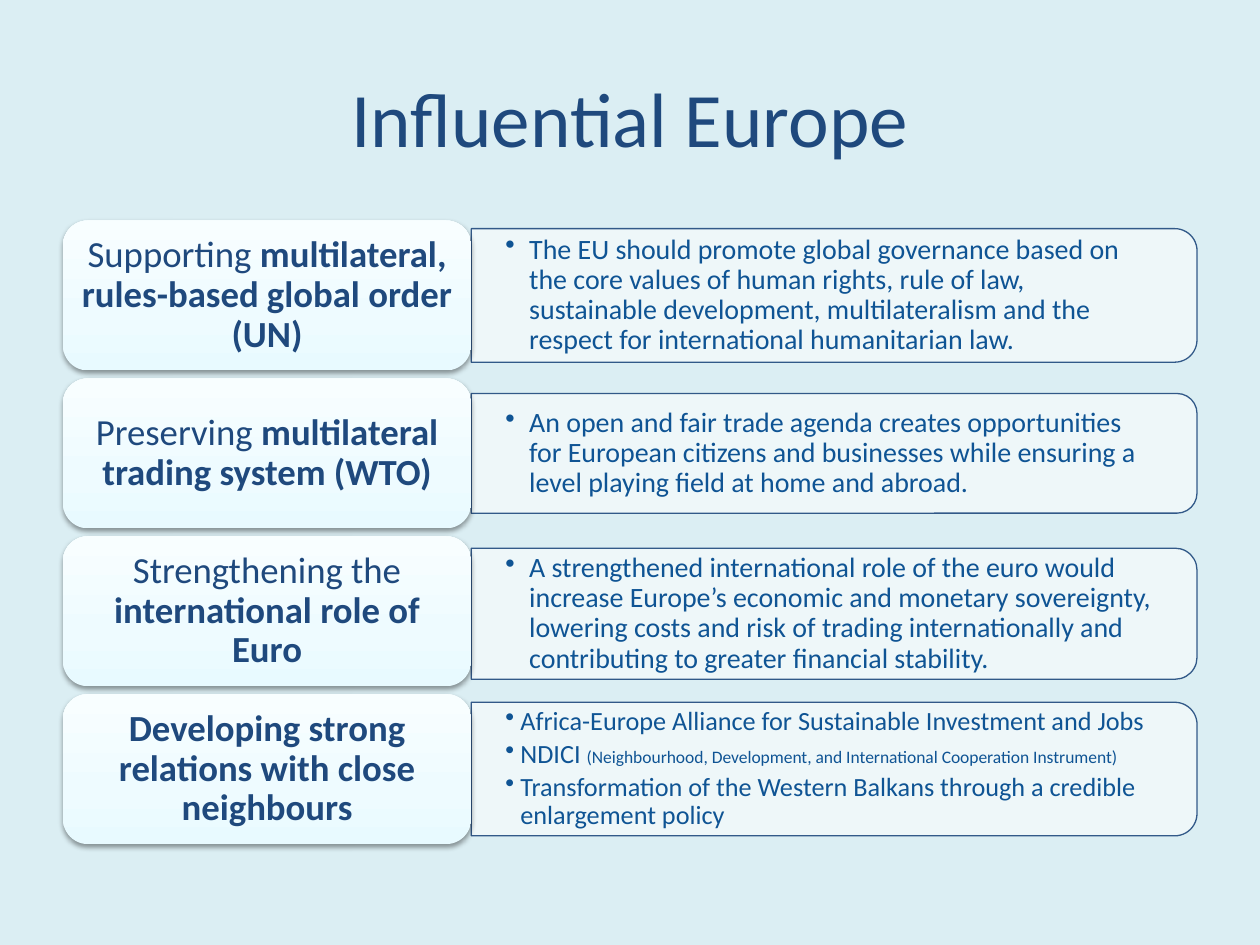
"""Build the Influential Europe slide: four themes, each with a detail panel."""
from lxml import etree
from pptx import Presentation
from pptx import util as u
from pptx.dml.color import RGBColor
from pptx.enum import shapes, text
from pptx.oxml import ns

COLORS = {"bg": "DBEEF3", "navy": "1F497D", "blue": "0F5494", "panel": "F1F8FA",
          "low": "E8FAFF", "mid": "EEFBFF", "high": "F8FEFF", "shadow": "000000"}
W, H = 10, 7.5
LEFT, SPLIT, RIGHT = 0.05 * W, 0.374 * W, 0.95 * W
TOP, PITCH, CARD_H = 1.75, 1.253, 1.19

# heading runs (text, bold), bullets of runs (text, size), indent, panel height, centre shift
ROWS = [
    ([("Supporting ", False), ("multilateral, rules-based global order (UN)", True)],
     [[("The EU should promote global governance based on the core values of human rights, "
        "rule of law, sustainable development, multilateralism and the respect for "
        "international humanitarian law.", 16)]], 0.19, 1.06, 0),
    ([("Preserving ", False), ("multilateral trading system (WTO)", True)],
     [[("An open and fair trade agenda creates opportunities for European citizens and "
        "businesses while ensuring a level playing field at home and abroad.", 16)]],
     0.19, 0.95, 0),
    ([("Strengthening the ", False), ("international role of Euro", True)],
     [[("A strengthened international role of the euro would increase Europe’s economic and "
        "monetary sovereignty, lowering costs and risk of trading internationally and "
        "contributing to greater financial stability.", 16)]], 0.19, 1.04, 0.02),
    ([("Developing strong relations with close neighbours", True)],
     [[("Africa-Europe Alliance for Sustainable Investment and Jobs", 15)],
      [("NDICI ", 15),
       ("(Neighbourhood, Development, and International Cooperation Instrument)", 10)],
      [("Transformation of the Western Balkans through a credible enlargement policy", 15)]],
     0.12, 1.06, 0),
]


def add_run(p, words, size, color, bold=False):
    r = p.add_run()
    r.text = words
    r.font.name, r.font.size, r.font.bold = "Calibri", u.Pt(size), bold
    r.font.color.rgb = RGBColor.from_string(COLORS[color])


def set_frame(tf, side, end):
    tf.word_wrap = True
    tf.auto_size = text.MSO_AUTO_SIZE.NONE
    tf.vertical_anchor = text.MSO_ANCHOR.MIDDLE
    tf.margin_left = tf.margin_right = u.Inches(side)
    tf.margin_top = tf.margin_bottom = u.Inches(end)


prs = Presentation()
prs.slide_width, prs.slide_height = u.Inches(W), u.Inches(H)
s = prs.slides.add_slide(prs.slide_layouts[5])
s.background.fill.solid()
s.background.fill.fore_color.rgb = RGBColor.from_string(COLORS["bg"])

title = s.shapes.title
title.left, title.top = u.Inches(LEFT), u.Inches(0.04 * H)
title.width, title.height = u.Inches(RIGHT - LEFT), u.Inches(H / 6)
set_frame(title.text_frame, 0.1, 0.05)
p = title.text_frame.paragraphs[0]
p.alignment = text.PP_ALIGN.CENTER
add_run(p, "Influential Europe", 44, "navy")

for i, (heading, bullets, indent, panel_h, shift) in enumerate(ROWS):
    top = TOP + i * PITCH
    mid = top + CARD_H / 2 + shift
    panel_w = RIGHT - SPLIT

    sp = s.shapes.add_shape(
        shapes.MSO_SHAPE.ROUND_2_SAME_RECTANGLE,
        u.Inches((SPLIT + RIGHT - panel_h) / 2), u.Inches(mid - panel_w / 2),
        u.Inches(panel_h), u.Inches(panel_w))
    sp.rotation = 90
    sp.shadow.inherit = False
    sp.fill.solid()
    sp.fill.fore_color.rgb = RGBColor.from_string(COLORS["panel"])
    sp.line.color.rgb = RGBColor.from_string(COLORS["navy"])
    sp.line.width = u.Pt(0.75)
    for clr in sp._element.spPr.iter(ns.qn("a:srgbClr")):
        etree.SubElement(clr, ns.qn("a:alpha"), val="90000")

    text_h = panel_h - 0.1
    box = s.shapes.add_textbox(u.Inches(SPLIT), u.Inches(mid - text_h / 2),
                               u.Inches(panel_w - 0.05), u.Inches(text_h))
    tf = box.text_frame
    set_frame(tf, 0.27, 0.14)
    for j, runs in enumerate(bullets):
        p = tf.add_paragraph() if j else tf.paragraphs[0]
        p.level, p.line_spacing, p.space_after = 1, 0.9, u.Pt(2.7)
        pPr = p._p.get_or_add_pPr()
        pPr.set("marL", str(u.Inches(indent)))
        pPr.set("indent", str(-u.Inches(indent)))
        etree.SubElement(pPr, ns.qn("a:buChar"), char="•")
        for words, size in runs:
            add_run(p, words, size, "blue")

    sp = s.shapes.add_shape(shapes.MSO_SHAPE.ROUNDED_RECTANGLE, u.Inches(LEFT), u.Inches(top),
                            u.Inches(SPLIT - LEFT), u.Inches(CARD_H))
    sp.line.fill.background()
    sp.fill.gradient()
    sp.fill.gradient_angle = 90
    stops = sp._element.spPr.find(".//" + ns.qn("a:gsLst"))
    stops.clear()
    for pos, name in ((0, "low"), (35, "mid"), (100, "high")):
        gs = etree.SubElement(stops, ns.qn("a:gs"), pos=str(pos * 1000))
        etree.SubElement(gs, ns.qn("a:srgbClr"), val=COLORS[name])
    sp.shadow.inherit = False
    effects = sp._element.spPr.find(ns.qn("a:effectLst"))
    shadow = etree.SubElement(effects, ns.qn("a:outerShdw"), blurRad=str(u.Pt(3.1)),
                              dist=str(u.Pt(1.6)), dir="5400000", rotWithShape="0")
    clr = etree.SubElement(shadow, ns.qn("a:srgbClr"), val=COLORS["shadow"])
    etree.SubElement(clr, ns.qn("a:alpha"), val="38000")

    set_frame(sp.text_frame, 0.09, 0.04)
    p = sp.text_frame.paragraphs[0]
    p.alignment, p.line_spacing = text.PP_ALIGN.CENTER, 0.9
    for words, bold in heading:
        add_run(p, words, 21, "navy", bold)

prs.save("out.pptx")
